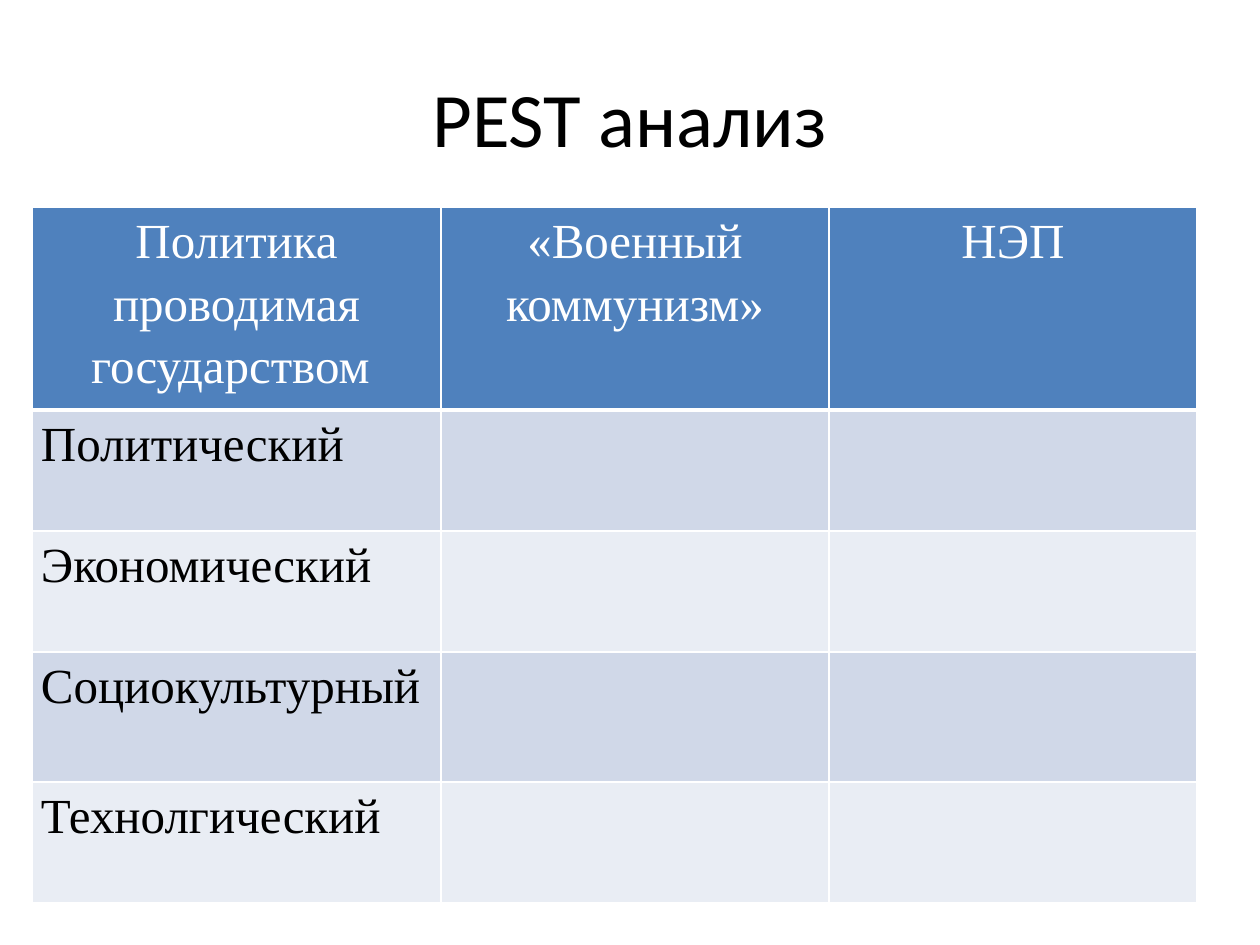
from dataclasses import dataclass

from lxml.etree import SubElement
from pptx import Presentation
from pptx.dml.color import RGBColor
from pptx.enum.text import MSO_ANCHOR, PP_ALIGN
from pptx.oxml.ns import qn
from pptx.util import Emu, Pt

EMU_PER_PX = 914400 / 126


@dataclass(frozen=True)
class Theme:
    black: str = "000000"
    white: str = "FFFFFF"
    header: str = "4F81BD"
    bands: tuple = ("D0D8E8", "E9EDF4")
    title_font: str = "Calibri"
    table_font: str = "Times New Roman"
    title_size: int = 44
    table_size: int = 28
    line_spacing: float = 1.15
    border: int = 1
    header_border: int = 3


def px(length):
    return Emu(round(length * EMU_PER_PX))


class SlideBuilder:
    def __init__(self, page, theme):
        self.page = page
        self.theme = theme

    def style(self, para, font, size, color, align):
        para.alignment = align
        para.font.name = font
        para.font.size = Pt(size)
        para.font.bold = False
        para.font.color.rgb = RGBColor.from_string(color)

    def title(self, text, left, top, width, height):
        box = self.page.shapes.add_textbox(px(left), px(top), px(width), px(height))
        frame = box.text_frame
        frame.word_wrap = True
        frame.vertical_anchor = MSO_ANCHOR.MIDDLE
        frame.text = text
        self.style(frame.paragraphs[0], self.theme.title_font,
                   self.theme.title_size, self.theme.black, PP_ALIGN.CENTER)

    def borders(self, cell, bottom):
        properties = cell._tc.get_or_add_tcPr()
        widths = {"L": self.theme.border, "R": self.theme.border,
                  "T": self.theme.border, "B": bottom}
        for side, width in widths.items():
            line = SubElement(properties, qn(f"a:ln{side}"), w=str(Pt(width)))
            fill = SubElement(line, qn("a:solidFill"))
            SubElement(fill, qn("a:srgbClr"), val=self.theme.white)

    def cell(self, cell, text, is_header, fill, align):
        theme = self.theme
        self.borders(cell, theme.header_border if is_header else theme.border)
        cell.fill.solid()
        cell.fill.fore_color.rgb = RGBColor.from_string(fill)
        cell.margin_left = cell.margin_right = px(9)
        cell.margin_top = cell.margin_bottom = 0
        if text:
            cell.text = text
            para = cell.text_frame.paragraphs[0]
            para.line_spacing = theme.line_spacing
            self.style(para, theme.table_font, theme.table_size,
                       theme.white if is_header else theme.black, align)

    def table(self, header, factors, left, top, widths, heights):
        table = self.page.shapes.add_table(
            len(heights), len(widths), px(left), px(top),
            px(sum(widths)), px(sum(heights))).table
        table.first_row = table.horz_banding = False
        for column, width in zip(table.columns, widths):
            column.width = px(width)
        for row, height in zip(table.rows, heights):
            row.height = px(height)

        # Header row
        for index, text in enumerate(header):
            self.cell(table.cell(0, index), text, True, self.theme.header, PP_ALIGN.CENTER)

        # Factor rows in alternating bands, left open for answers
        for number, factor in enumerate(factors):
            fill = self.theme.bands[number % 2]
            for index in range(len(widths)):
                self.cell(table.cell(number + 1, index), factor if index == 0 else "",
                          False, fill, PP_ALIGN.JUSTIFY)


def main():
    deck = Presentation()
    deck.slide_width, deck.slide_height = px(1260), px(945)
    page = deck.slides.add_slide(deck.slide_layouts[6])
    builder = SlideBuilder(page, Theme())

    # Heading
    builder.title("PEST анализ", 63, 38, 1134, 157)

    # Comparison of the two policies
    builder.table(
        header=("Политика проводимая государством ", "«Военный коммунизм»", "НЭП"),
        factors=("Политический", "Экономический", "Социокультурный", "Технолгический"),
        left=32, top=207, widths=(409, 388, 368), heights=(194, 121, 121, 130, 121))

    deck.save("out.pptx")


if __name__ == "__main__":
    main()
